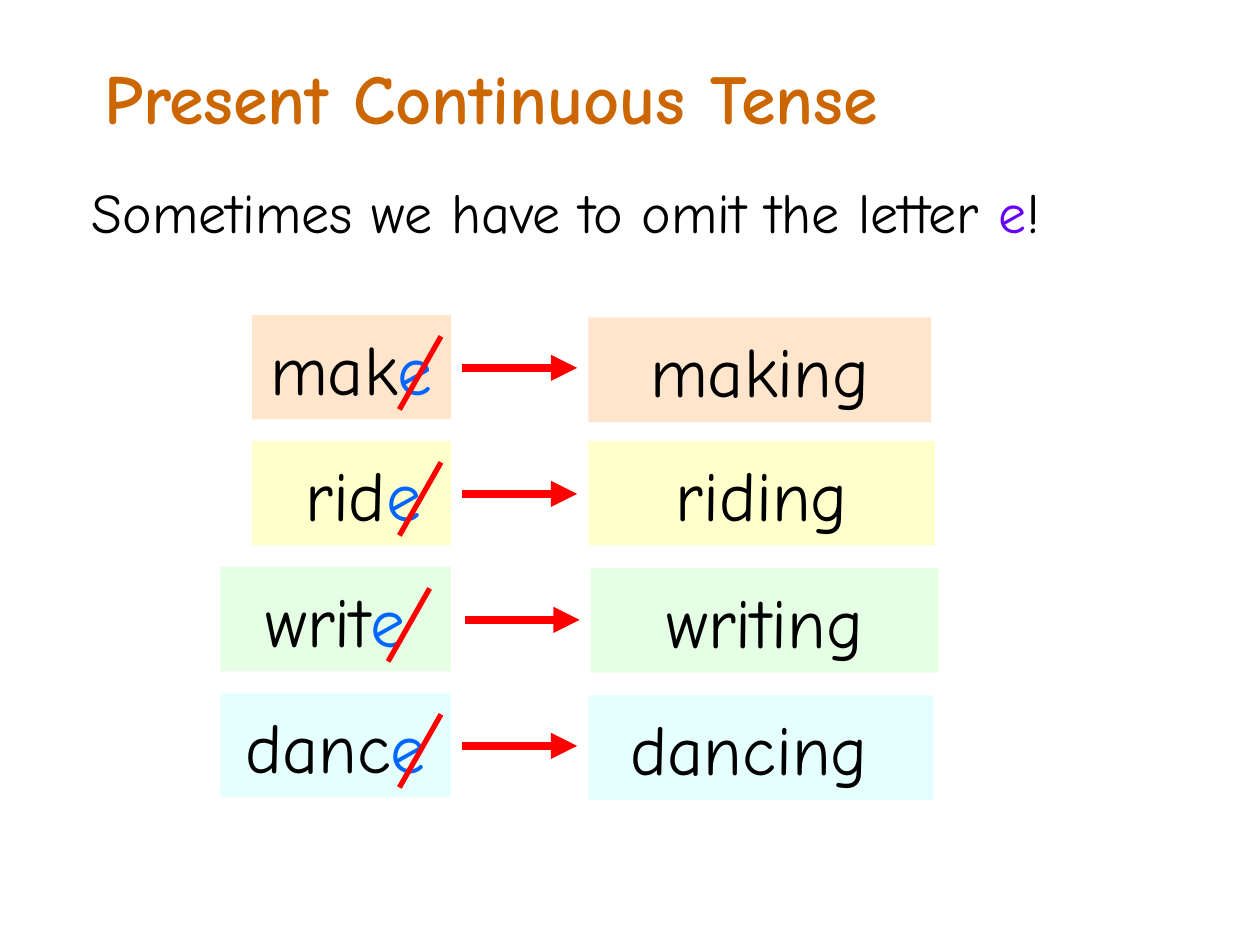
"""Build a slide on dropping the final e in the present continuous tense."""
from dataclasses import dataclass

from lxml.etree import SubElement
from pptx import Presentation
from pptx.dml.color import RGBColor
from pptx.enum.shapes import MSO_CONNECTOR as Connector, MSO_SHAPE as Shape
from pptx.enum.text import MSO_ANCHOR as Anchor, MSO_AUTO_SIZE as AutoSize, PP_ALIGN as Align
from pptx.oxml.ns import qn
from pptx.util import Inches, Pt

FONT = "Comic Neue"
BLACK, RED, BLUE, PURPLE, ORANGE = "000000", "FF0000", "0066FF", "6600FF", "CC6600"
FIRST_ROW, ROW_STEP, CARD_HEIGHT = 2.5, 1, 0.83
VERB_RIGHT, ARROW_LENGTH = 3.58, 0.91


@dataclass
class Verb:
    stem: str
    participle: str
    tint: str
    verb_left: float = 2
    participle_left: float = 4.67
    participle_width: float = 2.75
    participle_drop: float = 0
    arrow_left: float = 3.67
    strike_left: float = 3.17


VERBS = [
    Verb("mak", "making", "FFCC99", participle_width=2.72, participle_drop=0.02),
    Verb(" rid", "riding", "FFFF99"),
    Verb("writ", "writing", "CCFFCC", verb_left=1.75, participle_left=4.69,
         participle_width=2.76, participle_drop=0.01, arrow_left=3.69, strike_left=3.08),
    Verb("danc", "dancing ", "CCFFFF", verb_left=1.75, participle_width=2.74,
         participle_drop=0.02),
]


def rgb(value: str) -> RGBColor:
    return RGBColor.from_string(value)


def add_run(paragraph, text: str, size: float, color: str = BLACK, bold: bool = False) -> None:
    run = paragraph.add_run()
    run.text = text
    run.font.name = FONT
    run.font.size = Pt(size)
    run.font.bold = bold
    run.font.color.rgb = rgb(color)


def add_card(slide, left: float, top: float, width: float, tint: str,
             runs: list[tuple[str, str]]) -> None:
    card = slide.shapes.add_shape(Shape.RECTANGLE, Inches(left), Inches(top),
                                  Inches(width), Inches(CARD_HEIGHT))
    card.shadow.inherit = False
    card.line.fill.background()
    card.fill.solid()
    card.fill.fore_color.rgb = rgb(tint)
    tint_element = card.fill._xPr.find(qn("a:solidFill"))[0]
    SubElement(tint_element, qn("a:alpha"), val="50000")
    card.text_frame.vertical_anchor = Anchor.MIDDLE
    paragraph = card.text_frame.paragraphs[0]
    paragraph.alignment = Align.CENTER
    for text, color in runs:
        add_run(paragraph, text, 40, color)


def add_line(slide, start: tuple[float, float], end: tuple[float, float],
             weight: float, arrow: bool = False) -> None:
    line = slide.shapes.add_connector(Connector.STRAIGHT, *map(Inches, start + end))
    line.line.color.rgb = rgb(RED)
    line.line.width = Pt(weight)
    if arrow:
        SubElement(line.line._get_or_add_ln(), qn("a:tailEnd"), type="triangle")
    SubElement(line._element.spPr, qn("a:effectLst"))


def add_title(slide) -> None:
    title = slide.shapes.title
    title.left, title.top, title.width, title.height = map(Inches, (0.73, 0.38, 9, 0.77))
    frame = title.text_frame
    frame.vertical_anchor = Anchor.TOP
    frame.auto_size = AutoSize.SHAPE_TO_FIT_TEXT
    paragraph = frame.paragraphs[0]
    paragraph.alignment = Align.LEFT
    add_run(paragraph, "Present Continuous Tense", 40, ORANGE, bold=True)


def add_rule(slide) -> None:
    frame = slide.shapes.add_textbox(*map(Inches, (0.63, 1, 9.25, 1.25))).text_frame
    frame.word_wrap = True
    frame.vertical_anchor = Anchor.MIDDLE
    paragraph = frame.paragraphs[0]
    paragraph.line_spacing = 1.2
    add_run(paragraph, "Sometimes we have to omit the letter ", 32)
    add_run(paragraph, "e", 32, PURPLE)
    add_run(paragraph, "!", 32)


def add_verb(slide, verb: Verb, top: float) -> None:
    add_card(slide, verb.verb_left, top, VERB_RIGHT - verb.verb_left, verb.tint,
             [(verb.stem, BLACK), ("e", BLUE)])
    add_card(slide, verb.participle_left, top + verb.participle_drop,
             verb.participle_width, verb.tint, [(verb.participle, BLACK)])
    arrow_y = top + 0.42
    add_line(slide, (verb.arrow_left, arrow_y),
             (verb.arrow_left + ARROW_LENGTH, arrow_y), 5, arrow=True)
    add_line(slide, (verb.strike_left, top + 0.75), (verb.strike_left + 0.33, top + 0.17), 3)


def main() -> None:
    deck = Presentation()
    deck.slide_width, deck.slide_height = Inches(10), Inches(7.5)
    slide = deck.slides.add_slide(deck.slide_layouts[5])
    add_title(slide)
    add_rule(slide)
    for row, verb in enumerate(VERBS):
        add_verb(slide, verb, FIRST_ROW + row * ROW_STEP)
    deck.save("out.pptx")


if __name__ == "__main__":
    main()
